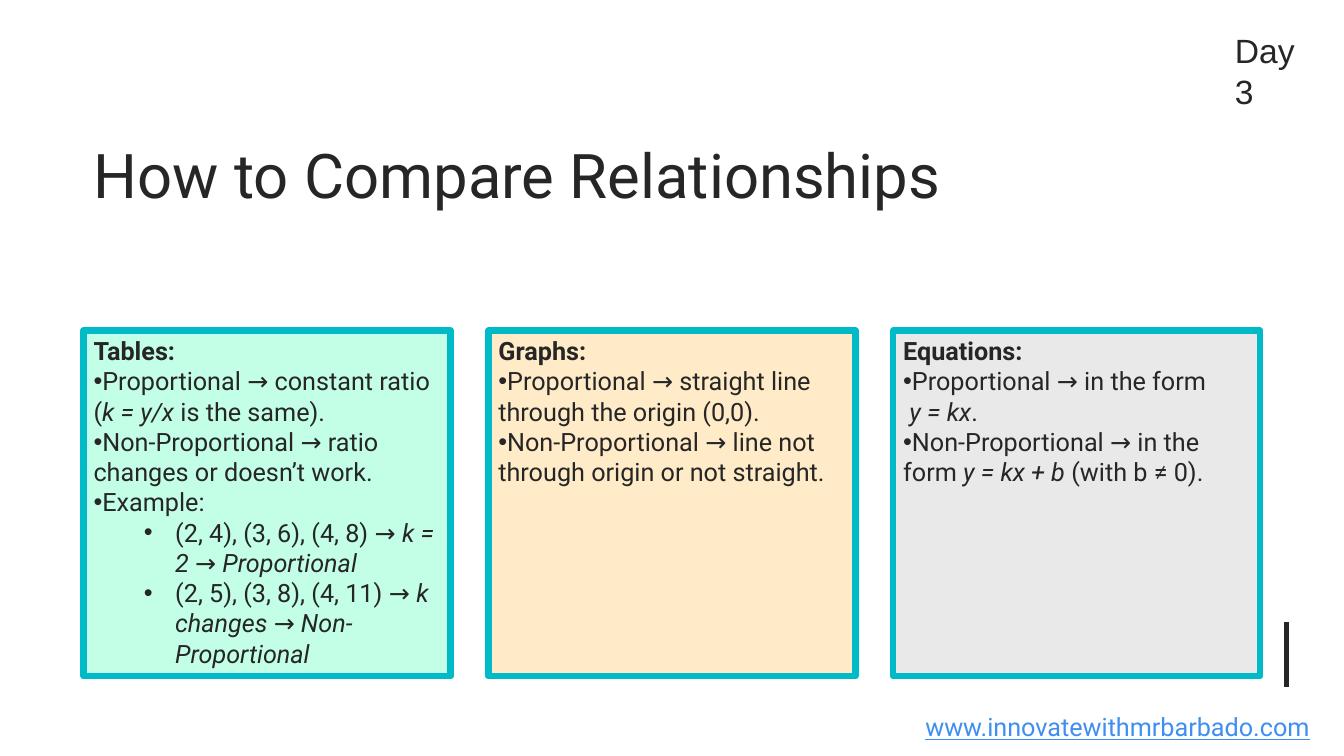
from lxml import etree
from pptx import Presentation
from pptx import util as u
from pptx.dml.color import RGBColor
from pptx.enum import shapes, text
from pptx.oxml.ns import qn

INK, TEAL = "262626", "00BAC8"
# Each line is (level, words): 0 plain, 1 bullet, 2 nested bullet; *...* is italic.
CARDS = [
    ("Tables:", "C3FFE7", [
        (1, "Proportional → constant ratio (*k = y/x* is the same)."),
        (1, "Non-Proportional → ratio changes or doesn’t work."),
        (1, "Example:"),
        (2, "(2, 4), (3, 6), (4, 8) → *k = 2 → Proportional*"),
        (2, "(2, 5), (3, 8), (4, 11) → *k changes → Non-Proportional*"),
    ]),
    ("Graphs:", "FFEBC7", [
        (1, "Proportional → straight line through the origin (0,0)."),
        (1, "Non-Proportional → line not through origin or not straight."),
    ]),
    ("Equations:", "E9E9E9", [
        (1, "Proportional → in the form"),
        (0, " *y = kx*."),
        (1, "Non-Proportional → in the form *y = kx + b* (with b ≠ 0)."),
    ]),
]


def color(code):
    return RGBColor.from_string(code)


def inches(*box):
    return [u.Inches(n) for n in box]


def style(para, size, code=INK, face="Roboto"):
    font = para.font
    font.name, font.size, font.color.rgb = face, u.Pt(size), color(code)


def bullet(para, level):
    props = para._p.get_or_add_pPr()
    left, hang = (0.81, -0.31) if level == 2 else (0, 0)
    props.set("marL", str(u.Inches(left)))
    props.set("indent", str(u.Inches(hang)))
    if level == 2:
        para.level = 1
    face = etree.SubElement(props, qn("a:buFont"))
    face.set("typeface", "Arial")
    etree.SubElement(props, qn("a:buChar")).set("char", "•")


def write(para, words):
    """Add runs, with the parts between asterisks in italics."""
    for i, part in enumerate(words.split("*")):
        if part:
            run = para.add_run()
            run.text = part
            if i % 2:
                run.font.italic = True


def title(slide, box):
    head = slide.shapes.title
    head.left, head.top, head.width, head.height = inches(*box)
    frame = head.text_frame
    frame.text = "How to Compare Relationships"
    frame.vertical_anchor = text.MSO_ANCHOR.MIDDLE
    para = frame.paragraphs[0]
    para.alignment = text.PP_ALIGN.LEFT
    style(para, 44)


def card(slide, box, name, fill, lines):
    shape = slide.shapes.add_shape(shapes.MSO_SHAPE.RECTANGLE, *inches(*box))
    shape.shadow.inherit = False
    shape.fill.solid()
    shape.fill.fore_color.rgb = color(fill)
    shape.line.color.rgb = color(TEAL)
    shape.line.width = u.Pt(4.5)
    etree.SubElement(shape.line._get_or_add_ln(), qn("a:round"))
    frame = shape.text_frame
    frame.word_wrap = True
    frame.vertical_anchor = text.MSO_ANCHOR.TOP
    head = frame.paragraphs[0]
    head.text = name
    head.font.bold = True
    for level, words in lines:
        para = frame.add_paragraph()
        if level:
            bullet(para, level)
        write(para, words)
    for para in frame.paragraphs:
        para.alignment = text.PP_ALIGN.LEFT
        style(para, 18)


def cards(slide, box):
    left, top, width, height = box
    gap = 0.375
    wide = (width - gap * (len(CARDS) - 1)) / len(CARDS)
    for i, data in enumerate(CARDS):
        card(slide, (left + i * (wide + gap), top, wide, height), *data)


def label(slide, box, words, wrap=True):
    frame = slide.shapes.add_textbox(*inches(*box)).text_frame
    frame.word_wrap = wrap
    para = frame.paragraphs[0]
    para.text = words
    return para


def day(slide, box):
    style(label(slide, box, "Day 3"), 24, face="Arial")


def site(slide, box):
    para = label(slide, box, "www.innovatewithmrbarbado.com", wrap=False)
    para.alignment = text.PP_ALIGN.CENTER
    style(para, 18, "3E8FF1")
    para.font.underline = True


def rule(slide, x, top, end):
    line = slide.shapes.add_connector(
        shapes.MSO_CONNECTOR.STRAIGHT, *inches(x, top, x, end))
    line.line.color.rgb = color(INK)
    line.line.width = u.Pt(3)
    etree.SubElement(line._element.spPr, qn("a:effectLst"))


def main():
    deck = Presentation()
    deck.slide_width, deck.slide_height = inches(13.33, 7.5)
    slide = deck.slides.add_slide(deck.slide_layouts[5])
    rule(slide, 12.76, 6.17, 6.82)
    title(slide, (0.83, 0.94, 11.35, 1.57))
    cards(slide, (0.83, 3.28, 11.67, 3.43))
    day(slide, (12.15, 0.25, 1.03, 0.59))
    site(slide, (9.07, 7.01, 4.03, 0.4))
    deck.save("out.pptx")


if __name__ == "__main__":
    main()
